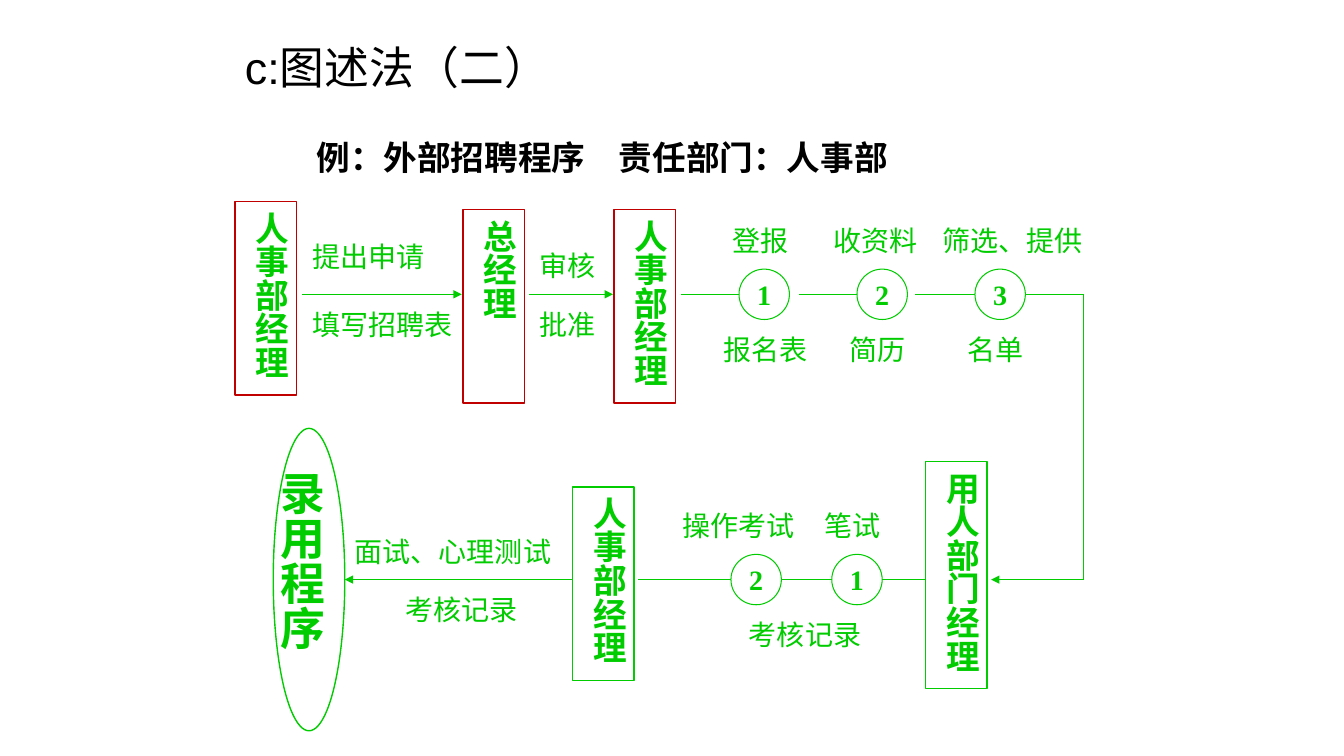
from lxml import etree
from pptx import Presentation
from pptx.dml.color import RGBColor
from pptx.enum import shapes, text
from pptx.oxml import ns
from pptx.util import Inches, Pt

COLORS = {"green": "00CC00", "red": "C00000", "black": "000000"}
FONT = "Times New Roman"
MIDDLE = text.MSO_ANCHOR.MIDDLE
TOP = text.MSO_ANCHOR.TOP
CENTER = text.PP_ALIGN.CENTER
LEFT = text.PP_ALIGN.LEFT

presentation = Presentation()
presentation.slide_width = Inches(13.33)
presentation.slide_height = Inches(7.5)
slide = presentation.slides.add_slide(presentation.slide_layouts[5])


def write(shape, content, size, bold=False, color="green", font=FONT,
          align=LEFT, anchor=TOP, vertical=False):
    frame = shape.text_frame
    frame.text = content
    frame.word_wrap = True
    frame.vertical_anchor = anchor
    if vertical:
        frame._txBody.bodyPr.set("vert", "eaVert")
    paragraph = frame.paragraphs[0]
    paragraph.alignment = align
    for run in paragraph.runs:
        run.font.size = Pt(size)
        run.font.bold = bold
        run.font.name = font
        run.font.color.rgb = RGBColor.from_string(COLORS[color])
    return paragraph


def outline(kind, left, top, width, height, color, weight):
    shape = slide.shapes.add_shape(
        kind, Inches(left), Inches(top), Inches(width), Inches(height))
    shape.shadow.inherit = False
    shape.fill.background()
    shape.line.color.rgb = RGBColor.from_string(COLORS[color])
    shape.line.width = Pt(weight)
    return shape


title = slide.shapes.title
title.left, title.top = Inches(2.33), Inches(0.4)
title.width, title.height = Inches(3.25), Inches(0.63)
title_paragraph = write(title, "c:图述法（二）", 32, color="black", font="Arial")
title_paragraph.line_spacing = 0.9
title.text_frame.auto_size = text.MSO_AUTO_SIZE.NONE

subtitle = slide.shapes.add_textbox(Inches(3.04), Inches(1.31), Inches(6.22), Inches(0.51))
subtitle_properties = subtitle.text_frame.paragraphs[0]._p.get_or_add_pPr()
tab_list = etree.SubElement(subtitle_properties, ns.qn("a:tabLst"))
etree.SubElement(tab_list, ns.qn("a:tab"), pos=str(Inches(2.82)), algn="l")
write(subtitle, "例：外部招聘程序\t责任部门：人事部", 24, True, "black", "Montserrat")

roles = [
    ("人事部经理", 2.33, 2, 1.92, "red"),
    ("总经理", 4.59, 2.08, 1.92, "red"),
    ("人事部经理", 6.09, 2.08, 1.92, "red"),
    ("用人部门经理", 9.18, 4.58, 2.25, "green"),
    ("人事部经理", 5.68, 4.83, 1.92, "green"),
]
for role, left, top, height, color in roles:
    box = outline(shapes.MSO_SHAPE.RECTANGLE, left, top, 0.61, height, color, 1)
    write(box, role, 24, True, vertical=True)

outline(shapes.MSO_SHAPE.OVAL, 2.71, 4.25, 0.71, 3, "green", 1)
hiring = slide.shapes.add_textbox(Inches(2.56), Inches(4.58), Inches(0.74), Inches(2.42))
write(hiring, "录用程序", 32, True, align=CENTER, vertical=True)

labels = [
    ("提出申请", 3, 2.33, 1.33),
    ("填写招聘表", 3, 3, 1.67),
    ("审核", 5.25, 2.42, 0.83),
    ("批准", 5.25, 3, 0.83),
    ("登报", 7.17, 2.17, 0.83),
    ("报名表", 7.08, 3.25, 1.17),
    ("收资料", 8.17, 2.17, 1.17),
    ("简历", 8.33, 3.25, 0.83),
    ("筛选、提供", 9.25, 2.17, 1.75),
    ("名单", 9.5, 3.25, 0.83),
    ("笔试", 8.08, 5, 0.83),
    ("操作考试", 6.67, 5, 1.42),
    ("考核记录", 7.33, 6.08, 1.42),
    ("面试、心理测试", 3.42, 5.25, 2.25),
    ("考核记录", 3.92, 5.83, 1.42),
]
for label, left, top, width in labels:
    box = slide.shapes.add_textbox(Inches(left), Inches(top), Inches(width), Inches(0.43))
    write(box, label, 20)

steps = [("1", 7.33, 2.67), ("2", 8.5, 2.67), ("3", 9.67, 2.67),
         ("1", 8.25, 5.5), ("2", 7.25, 5.5)]
for number, left, top in steps:
    circle = outline(shapes.MSO_SHAPE.OVAL, left, top, 0.5, 0.5, "green", 0.75)
    frame = circle.text_frame
    frame.margin_left = frame.margin_right = frame.margin_top = frame.margin_bottom = 0
    write(circle, number, 20, True, align=CENTER, anchor=MIDDLE)

UPPER, LOWER, TURN = 2.92, 5.75, 10.75
flows = [
    (3, UPPER, 4.58, UPPER, True),
    (5.25, UPPER, 6.08, UPPER, True),
    (6.75, UPPER, 7.33, UPPER, False),
    (7.92, UPPER, 8.5, UPPER, False),
    (9.08, UPPER, 9.67, UPPER, False),
    (10.17, UPPER, TURN, UPPER, False),
    (TURN, UPPER, TURN, LOWER, False),
    (TURN, LOWER, 9.83, LOWER, True),
    (9.17, LOWER, 8.75, LOWER, False),
    (8.25, LOWER, 7.75, LOWER, False),
    (7.25, LOWER, 6.33, LOWER, False),
    (5.67, LOWER, 3.42, LOWER, True),
]
for start_x, start_y, end_x, end_y, arrow in flows:
    connector = slide.shapes.add_connector(
        shapes.MSO_CONNECTOR.STRAIGHT, Inches(start_x), Inches(start_y),
        Inches(end_x), Inches(end_y))
    connector.line.color.rgb = RGBColor.from_string(COLORS["green"])
    connector.line.width = Pt(0.75)
    if arrow:
        etree.SubElement(connector.line._get_or_add_ln(), ns.qn("a:tailEnd"), type="triangle")
    etree.SubElement(connector._element.spPr, ns.qn("a:effectLst"))

presentation.save("out.pptx")
